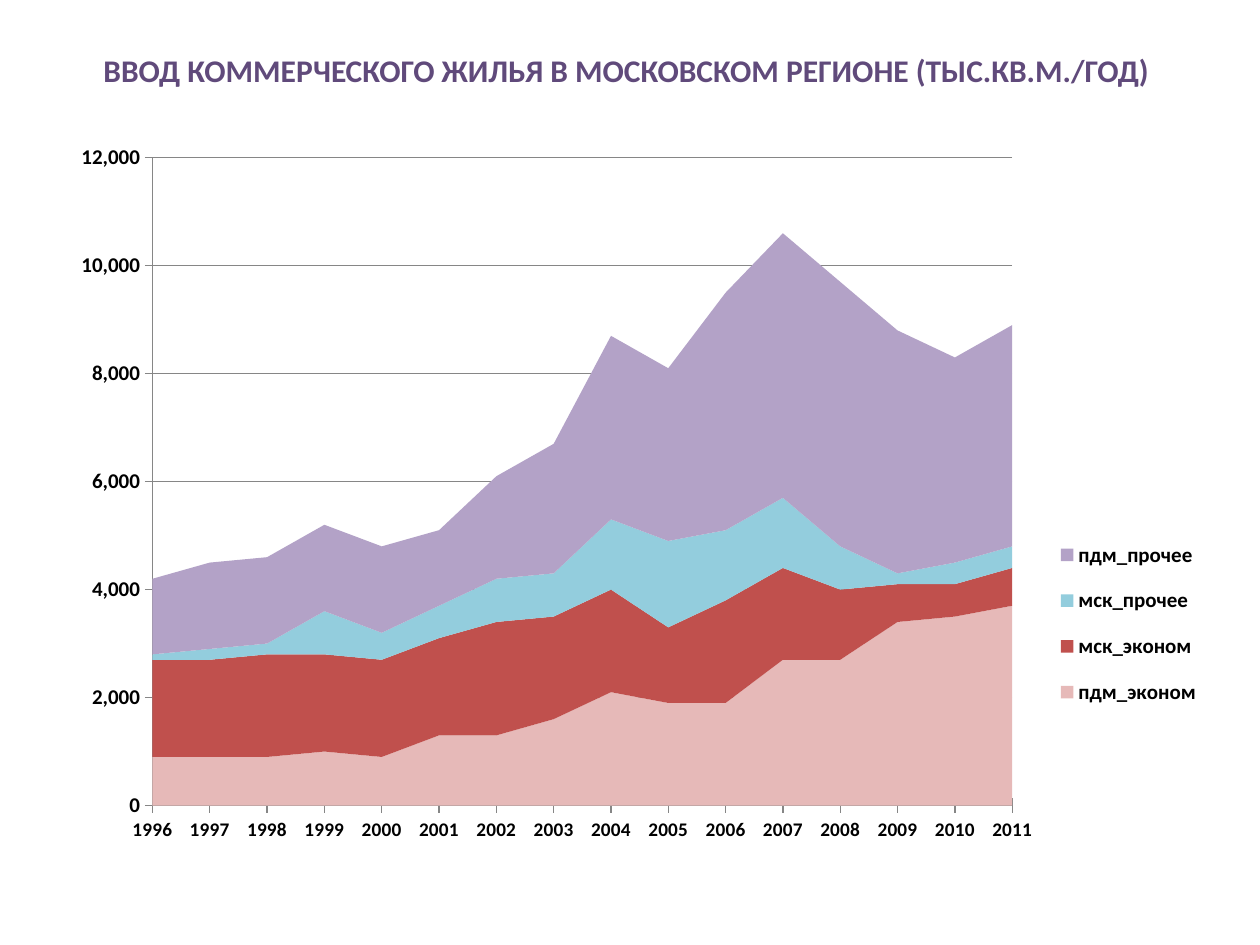
from lxml.etree import SubElement
from pptx import Presentation
from pptx.chart.data import CategoryChartData
from pptx.dml.color import RGBColor
from pptx.enum.chart import XL_CHART_TYPE as ChartType, XL_LEGEND_POSITION as LegendPos, XL_TICK_MARK as Tick
from pptx.enum.text import MSO_ANCHOR as Anchor, PP_ALIGN as Align
from pptx.oxml.ns import qn
from pptx.util import Pt


def rgb(color):
    return RGBColor.from_string(color)


def place_inside(parent, index, x, y, w, h, inner=False):
    for old in parent.findall(qn("c:layout")):
        parent.remove(old)
    layout = SubElement(parent, qn("c:layout"))
    parent.insert(index, layout)
    manual = SubElement(layout, qn("c:manualLayout"))
    settings = [("layoutTarget", "inner")] if inner else []
    settings += [("xMode", "edge"), ("yMode", "edge"), ("x", x), ("y", y), ("w", w), ("h", h)]
    for tag, value in settings:
        SubElement(manual, qn(f"c:{tag}")).set("val", str(value))


prs = Presentation()
prs.slide_width, prs.slide_height = Pt(720), Pt(540)
slide = prs.slides.add_slide(prs.slide_layouts[5])

title = slide.shapes.title
title.left, title.top, title.width, title.height = Pt(34), Pt(16.5), Pt(648), Pt(90)
title_frame = title.text_frame
title_frame.word_wrap = True
title_frame.vertical_anchor = Anchor.MIDDLE
title_frame.margin_bottom = Pt(47)
heading = title_frame.paragraphs[0]
heading.alignment = Align.CENTER
heading_run = heading.add_run()
heading_run.text = "ВВОД КОММЕРЧЕСКОГО ЖИЛЬЯ В МОСКОВСКОМ РЕГИОНЕ (ТЫС.КВ.М./ГОД)"
heading_run.font.name = "Calibri"
heading_run.font.size = Pt(18)
heading_run.font.bold = True
heading_run.font.color.rgb = rgb("604A7B")

housing = [
    ("пдм_эконом", "E6B9B8",
     [900, 900, 900, 1000, 900, 1300, 1300, 1600, 2100, 1900, 1900, 2700, 2700, 3400, 3500, 3700]),
    ("мск_эконом", "C0504D",
     [1800, 1800, 1900, 1800, 1800, 1800, 2100, 1900, 1900, 1400, 1900, 1700, 1300, 700, 600, 700]),
    ("мск_прочее", "93CDDD",
     [100, 200, 200, 800, 500, 600, 800, 800, 1300, 1600, 1300, 1300, 800, 200, 400, 400]),
    ("пдм_прочее", "B3A2C7",
     [1400, 1600, 1600, 1600, 1600, 1400, 1900, 2400, 3400, 3200, 4400, 4900, 4900, 4500, 3800, 4100]),
]
completions = CategoryChartData(number_format="#,##0")
completions.categories = [str(year) for year in range(1996, 2012)]
for name, color, volumes in housing:
    completions.add_series(name, volumes)

chart = slide.shapes.add_chart(
    ChartType.AREA_STACKED, Pt(34), Pt(73.5), Pt(664), Pt(416), completions).chart
chart.has_title = False
chart.font.name = "Calibri"
chart.font.size = Pt(10)
chart.font.color.rgb = rgb("000000")
chart.plots[0].vary_by_categories = False
for series, (name, color, volumes) in zip(chart.plots[0].series, housing):
    series.format.fill.solid()
    series.format.fill.fore_color.rgb = rgb(color)
    series.format.line.fill.background()

years, volume = chart.category_axis, chart.value_axis
volume.minimum_scale, volume.maximum_scale, volume.major_unit = 0, 12000, 2000
volume.has_major_gridlines = True
years.has_major_gridlines = False
volume.tick_labels.number_format = "#,##0"
volume.tick_labels.number_format_is_linked = False
for axis, size in ((years, 11), (volume, 12)):
    axis.major_tick_mark = Tick.CROSS if axis is years else Tick.OUTSIDE
    axis.minor_tick_mark = Tick.NONE
    axis.tick_labels.font.size = Pt(size)
    axis.tick_labels.font.bold = True
    axis.format.line.color.rgb = rgb("868686")
    axis.format.line.width = Pt(0.75)
volume.major_tick_mark = Tick.CROSS
gridline = volume.major_gridlines.format.line
gridline.color.rgb = rgb("868686")
gridline.width = Pt(0.75)

chart.has_legend = True
legend = chart.legend
legend.position = LegendPos.RIGHT
legend.include_in_layout = False
legend.font.size = Pt(12)
legend.font.bold = True

plot_area = chart.element.find(".//" + qn("c:plotArea"))
plot_area.find(".//" + qn("c:crossBetween")).set("val", "midCat")
place_inside(plot_area, 0, 0.08, 0.04, 0.74, 0.89, inner=True)
place_inside(chart.element.find(".//" + qn("c:legend")), 1, 0.85, 0.54, 0.14, 0.28)

prs.save("out.pptx")
